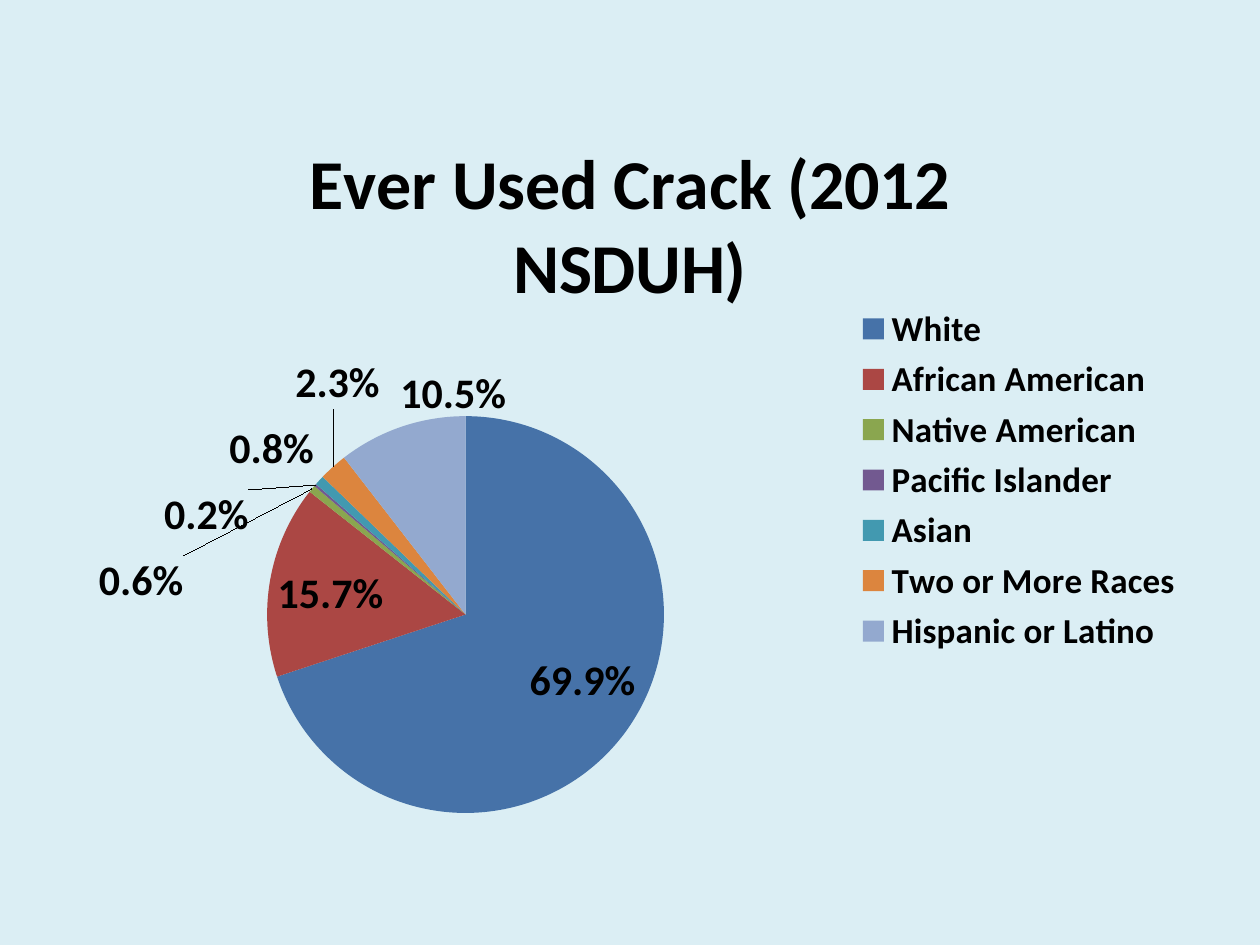
from lxml.etree import SubElement as Sub
from pptx import Presentation
from pptx.chart.data import CategoryChartData as Data
from pptx.dml.color import RGBColor as Rgb
from pptx.enum.chart import XL_CHART_TYPE as Kind
from pptx.enum.chart import XL_LABEL_POSITION as Spot
from pptx.enum.chart import XL_LEGEND_POSITION as Side
from pptx.oxml.ns import qn
from pptx.util import Inches, Pt

FONT = "Calibri"
TITLE = ("Ever Used Crack (2012", "NSDUH)")
HUES = {"back": "DBEEF4", "text": "000000"}
RACES = {
    "White": (70, "4672A8"),
    "African American": (15.7, "AB4744"),
    "Native American": (0.6, "8AA64F"),
    "Pacific Islander": (0.2, "725990"),
    "Asian": (0.8, "4299B0"),
    "Two or More Races": (2.3, "DC853E"),
    "Hispanic or Latino": (10.5, "93A9CF"),
}


def style(font, size):
    font.name = FONT
    font.size = Pt(size)
    font.bold = True
    font.color.rgb = Rgb.from_string(HUES["text"])


def paint(fill, hue):
    fill.solid()
    fill.fore_color.rgb = Rgb.from_string(hue)


def place(plot, **box):
    """Fix the inner plot area, in shares of the chart's size."""
    area = plot.getparent()
    lay = area.find(qn("c:layout"))
    if lay is None:
        lay = area.makeelement(qn("c:layout"))
        area.insert(0, lay)
    man = Sub(lay, qn("c:manualLayout"))
    Sub(man, qn("c:layoutTarget"), val="inner")
    for key in ("xMode", "yMode"):
        Sub(man, qn("c:" + key), val="edge")
    for key, share in box.items():
        Sub(man, qn("c:" + key), val=str(share))


def add_title(chart):
    chart.has_title = True
    chart.chart_title.include_in_layout = False
    frame = chart.chart_title.text_frame
    for i, line in enumerate(TITLE):
        para = frame.add_paragraph() if i else frame.paragraphs[0]
        run = para.add_run()
        run.text = line
        style(run.font, 40)


def add_legend(chart):
    chart.has_legend = True
    chart.legend.position = Side.RIGHT
    chart.legend.include_in_layout = False
    style(chart.legend.font, 20)


def add_labels(plot):
    plot.has_data_labels = True
    tags = plot.data_labels
    tags.show_value = False
    tags.show_percentage = True
    tags.number_format = "0.0%"
    tags.number_format_is_linked = False
    tags.position = Spot.BEST_FIT
    style(tags.font, 24)
    lead = tags._element.find(qn("c:showLeaderLines"))
    if lead is None:
        lead = Sub(tags._element, qn("c:showLeaderLines"))
    lead.set("val", "1")


def add_pie(slide, wide, high):
    data = Data()
    data.categories = list(RACES)
    data.add_series("Series 1", [val for val, hue in RACES.values()])
    left, top = wide * 0.05, high * 0.123
    chart = slide.shapes.add_chart(
        Kind.PIE, int(left), int(top), int(wide * 0.9), int(high * 0.77), data
    ).chart
    style(chart.font, 24)
    add_title(chart)
    add_legend(chart)
    plot = chart.plots[0]
    plot.vary_by_categories = True
    for i, (val, hue) in enumerate(RACES.values()):
        paint(plot.series[0].points[i].format.fill, hue)
    add_labels(plot)
    place(plot._element, x=0.18, y=0.41, w=0.35, h=0.55)


def main():
    deck = Presentation()
    deck.slide_width, deck.slide_height = Inches(10), Inches(7.5)
    slide = deck.slides.add_slide(deck.slide_layouts[6])
    paint(slide.background.fill, HUES["back"])
    add_pie(slide, deck.slide_width, deck.slide_height)
    deck.save("out.pptx")


if __name__ == "__main__":
    main()
